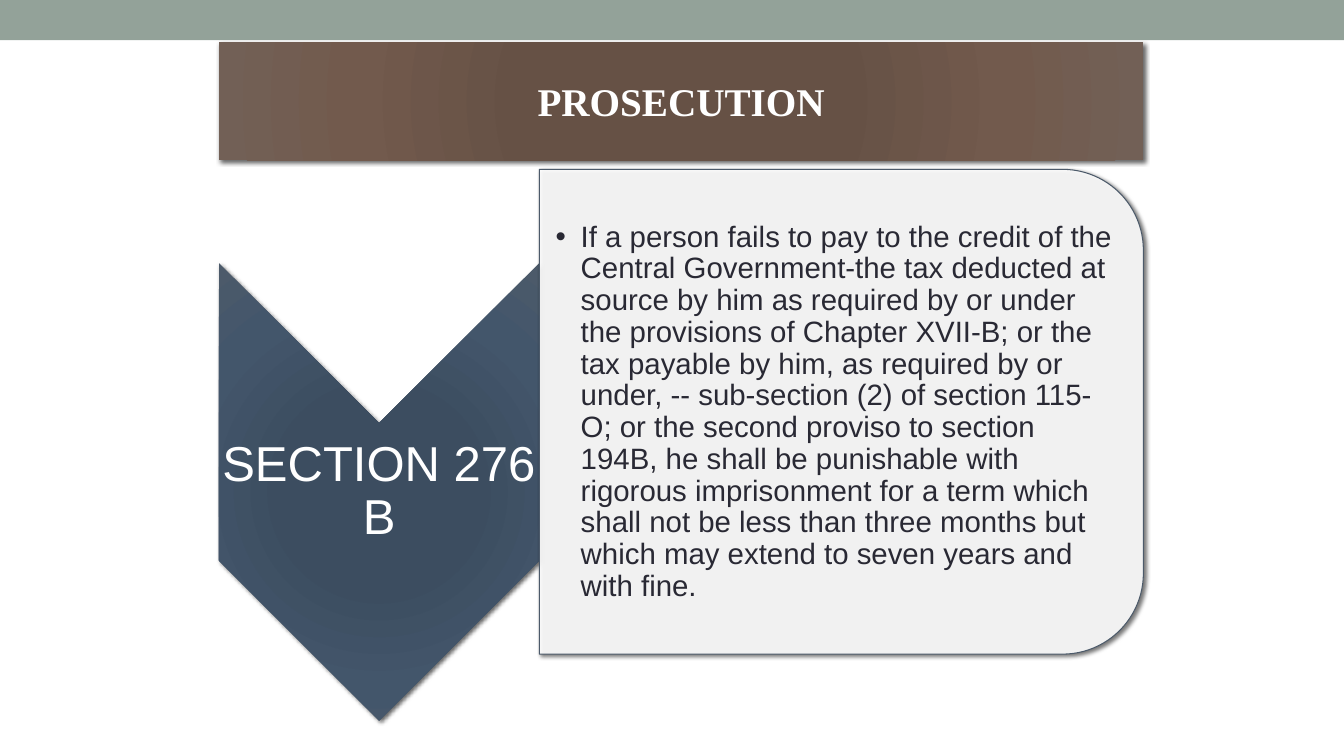
from lxml import etree
from pptx import Presentation
from pptx.dml.color import RGBColor
from pptx.enum import shapes, text
from pptx.oxml import parse_xml
from pptx.oxml.ns import nsdecls, qn
from pptx.util import Inches, Pt

WHITE = RGBColor(0xFF, 0xFF, 0xFF)
SAGE = RGBColor(0x93, 0xA2, 0x99)
SLATE = RGBColor(0x4C, 0x5A, 0x6A)
INK = RGBColor(0x29, 0x29, 0x34)
BROWNS = [RGBColor(0x68, 0x50, 0x44), RGBColor(0x66, 0x51, 0x45),
          RGBColor(0x72, 0x5A, 0x4D), RGBColor(0x72, 0x60, 0x56)]
BLUES = [RGBColor(0x3B, 0x4D, 0x61), RGBColor(0x3C, 0x4D, 0x60),
         RGBColor(0x43, 0x56, 0x6B), SLATE]
GRADIENT_STOPS = [0, 34, 70, 100]

PROVISION = (
    "If a person fails to pay to the credit of the Central Government-the tax "
    "deducted at source by him as required by or under the provisions of "
    "Chapter XVII-B; or the tax payable by him, as required by or under, -- "
    "sub-section (2) of section 115-O; or the second proviso to section 194B, "
    "he shall be punishable with rigorous imprisonment for a term which shall "
    "not be less than three months but which may extend to seven years and "
    "with fine."
)


def place(shape, left, top, width, height):
    shape.left, shape.top = Inches(left), Inches(top)
    shape.width, shape.height = Inches(width), Inches(height)


def add_plain_shape(slide, kind, box, color, rotation=0):
    shape = slide.shapes.add_shape(kind, *(Inches(value) for value in box))
    shape.rotation = rotation
    shape.shadow.inherit = False
    shape.fill.solid()
    shape.fill.fore_color.rgb = color
    shape.line.fill.background()
    return shape


def fill_radial(shape, colors):
    shape.fill.solid()
    stops = "".join(
        f'<a:gs pos="{position * 1000}"><a:srgbClr val="{color}"/></a:gs>'
        for position, color in zip(GRADIENT_STOPS, colors))
    gradient = parse_xml(
        f'<a:gradFill {nsdecls("a")} rotWithShape="1"><a:gsLst>{stops}</a:gsLst>'
        '<a:path path="circle"><a:fillToRect l="100000" t="100000" '
        'r="100000" b="100000"/></a:path></a:gradFill>')
    properties = shape._element.spPr
    properties.replace(properties.find(qn("a:solidFill")), gradient)


def cast_shadow(shape):
    shape.shadow.inherit = False
    effects = shape._element.spPr.find(qn("a:effectLst"))
    effects.append(parse_xml(
        f'<a:outerShdw {nsdecls("a")} blurRad="{Pt(3)}" dist="{Pt(2)}" '
        'dir="2700000" rotWithShape="0"><a:srgbClr val="000000">'
        '<a:alpha val="60000"/></a:srgbClr></a:outerShdw>'))


def set_opacity(shape, percent):
    color = shape._element.spPr.find(qn("a:solidFill"))[0]
    etree.SubElement(color, qn("a:alpha")).set("val", str(percent * 1000))


def set_bullet(paragraph, indent):
    properties = paragraph._p.get_or_add_pPr()
    properties.set("marL", str(Inches(indent)))
    properties.set("indent", str(-Inches(indent)))
    etree.SubElement(properties, qn("a:buChar")).set("char", "•")


def write(shape, words, size, color, font="Arial", bold=False, spacing=1.0,
          align=text.PP_ALIGN.CENTER, insets=(0.1, 0.05, 0.1, 0.05)):
    frame = shape.text_frame
    frame.auto_size = text.MSO_AUTO_SIZE.NONE
    frame.word_wrap = True
    frame.vertical_anchor = text.MSO_ANCHOR.MIDDLE
    (frame.margin_left, frame.margin_top, frame.margin_right,
     frame.margin_bottom) = (Inches(inset) for inset in insets)
    paragraph = frame.paragraphs[0]
    paragraph.alignment = align
    paragraph.line_spacing = spacing
    paragraph.space_before = Pt(0)
    run = paragraph.add_run()
    run.text = words
    run.font.name, run.font.size, run.font.bold = font, Pt(size), bold
    run.font.color.rgb = color
    return paragraph


def add_heading(slide):
    title = slide.shapes.title
    place(title, 2.17, 0.42, 9.17, 1.17)
    fill_radial(title, BROWNS)
    cast_shadow(title)
    write(title, "PROSECUTION", 28, WHITE, font="Times New Roman", bold=True)


def add_section_chevron(slide):
    chevron = add_plain_shape(slide, shapes.MSO_SHAPE.CHEVRON,
                              (1.49, 3.29, 4.54, 3.18), SLATE, rotation=90)
    fill_radial(chevron, BLUES)
    cast_shadow(chevron)
    label = slide.shapes.add_textbox(Inches(2.17), Inches(4.2),
                                     Inches(3.18), Inches(1.36))
    write(label, "SECTION 276 B", 35, WHITE, spacing=0.9, insets=[0.02] * 4)


def add_provision_panel(slide):
    panel = add_plain_shape(slide, shapes.MSO_SHAPE.ROUND_2_SAME_RECTANGLE,
                            (5.94, 1.09, 4.81, 5.99), WHITE, rotation=90)
    set_opacity(panel, 90)
    panel.line.color.rgb = SLATE
    panel.line.width = Pt(0.75)
    cast_shadow(panel)
    body = slide.placeholders[1]
    place(body, 5.35, 1.92, 5.75, 4.34)
    paragraph = write(body, PROVISION, 21, INK, spacing=0.9,
                      align=text.PP_ALIGN.LEFT, insets=(0.16, 0.01, 0.01, 0.01))
    set_bullet(paragraph, 0.25)
    panel._element.addnext(body._element)  # text in front of its panel


def main():
    presentation = Presentation()
    presentation.slide_width = Inches(13.33)
    presentation.slide_height = Inches(7.5)
    slide = presentation.slides.add_slide(presentation.slide_layouts[1])
    add_plain_shape(slide, shapes.MSO_SHAPE.RECTANGLE, (0, 0, 13.33, 0.4), SAGE)
    add_heading(slide)
    add_section_chevron(slide)
    add_provision_panel(slide)
    presentation.save("out.pptx")


if __name__ == "__main__":
    main()
